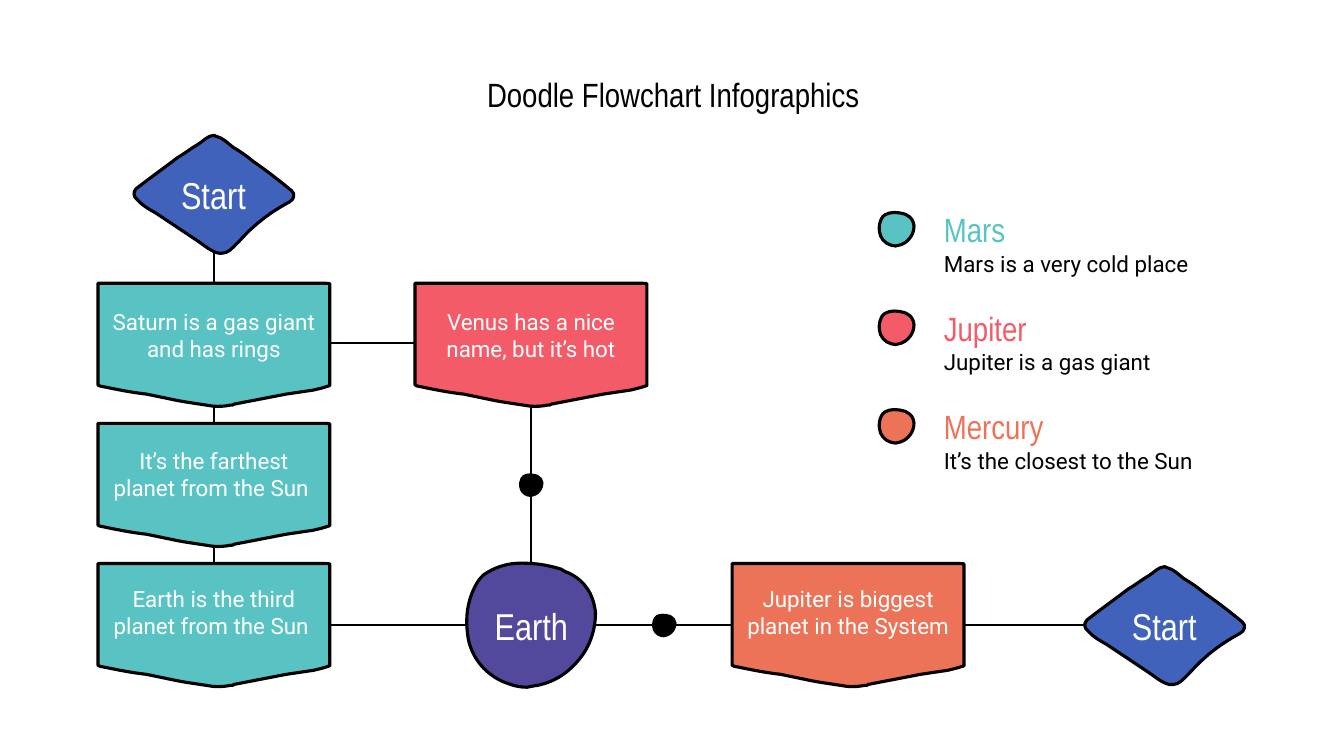
from lxml import etree
from pptx import Presentation
from pptx.dml.color import RGBColor
from pptx.enum.shapes import MSO_CONNECTOR
from pptx.enum.text import MSO_ANCHOR as ANCHOR, PP_ALIGN as ALIGN
from pptx.oxml.ns import qn
from pptx.util import Pt

BLACK = RGBColor(0x00, 0x00, 0x00)
WHITE = RGBColor(0xFF, 0xFF, 0xFF)
BLUE = RGBColor(0x40, 0x62, 0xBB)
PURPLE = RGBColor(0x52, 0x48, 0x9C)
TEAL = RGBColor(0x59, 0xC3, 0xC3)
RED = RGBColor(0xF4, 0x5B, 0x69)
ORANGE = RGBColor(0xEC, 0x73, 0x57)
HEAD, BODY = "Arial Narrow", "Roboto"

TITLE = "Doodle Flowchart Infographics"
STEPS = [
    (0, 0, "Saturn is a gas giant and has rings", TEAL),
    (0, 1, "It’s the farthest planet from the Sun ", TEAL),
    (1, 0, "Venus has a nice name, but it’s hot", RED),
    (0, 2, "Earth is the third planet from the Sun ", TEAL),
    (2, 2, "Jupiter is biggest planet in the System", ORANGE),
]
LEGEND = [
    ("Mars", "Mars is a very cold place", TEAL),
    ("Jupiter", "Jupiter is a gas giant", RED),
    ("Mercury", "It’s the closest to the Sun", ORANGE),
]
LINKS = [
    (152.9, 177, 152.9, 412),
    (379.4, 289, 379.4, 405),
    (232.5, 446.4, 776, 446.4),
    (235.5, 244.8, 296.6, 244.8),
]
DOTS = [(370.6, 338.2), (465.6, 438.4)]

DIAMOND = [
    (57.6, 0),
    (53.3, 0, 49.7, 4.3, 46.1, 6.5),
    (41, 9.4, 36.7, 13, 31.7, 15.8),
    (22.3, 23, 12.2, 30.2, 2.9, 37.4),
    (2.2, 37.4, 2.2, 38.2, 1.4, 38.9),
    (0, 40.3, 0, 43.9, 2.2, 45.4),
    (5.8, 49.7, 10.8, 52.6, 15.8, 55.4),
    (31, 65.5),
    (46.1, 75.6),
    (50.4, 78.5, 56.2, 83.5, 61.2, 84.2),
    (61.9, 84.2, 62.6, 84.2, 63.4, 84.2),
    (67.7, 84.2, 70.6, 80.6, 74.2, 77),
    (77.8, 73.4, 81.4, 69.1, 85.7, 65.5),
    (93.6, 58.3, 102.2, 52.6, 111.6, 47.5),
    (114.5, 46.1, 115.9, 41.8, 113, 39.6),
    (104.4, 32.4, 95, 25.2, 85.7, 18.7),
    (81.4, 15.1, 76.3, 11.5, 71.3, 8.6),
    (67.7, 5.8, 63.4, 1.4, 59, 0.7),
    (58.3, 0, 58, 0, 57.6, 0),
]
BLOB = [
    (39.6, 0),
    (31, 0, 23, 2.2, 15.8, 6.5),
    (11.5, 8.6, 8.6, 13, 6.5, 17.3),
    (1.4, 27.4, 0, 38.9, 1.4, 49.7),
    (2.9, 67, 15.1, 81.4, 31.7, 86.4),
    (35.3, 87.8, 39.6, 88.6, 43.9, 88.6),
    (45.4, 88.6, 46.8, 87.8, 48.2, 87.8),
    (64.1, 85.7, 75.6, 77, 84.2, 64.8),
    (90, 56.2, 92.9, 46.1, 92.9, 35.3),
    (91.4, 22.3, 85.7, 13, 74.2, 7.2),
    (72, 6.5, 70.6, 5.8, 68.4, 4.3),
    (59, 1.4, 50.4, 0, 41, 0),
    (40.5, 0, 40, 0, 39.6, 0),
]
PENNANT = [
    (165.6, 0.3),
    (164.2, 0, 161.3, 0, 158.4, 0),
    (74.9, 0),
    (34.6, 0),
    (25.2, 0, 15.1, 0, 5.8, 0),
    (4.3, 0, 2.9, 0, 0, 0),
    (0, 72.7),
    (1.4, 73.4),
    (12.2, 75.6, 22.3, 77.8, 34.6, 79.2),
    (55.4, 83.5),
    (62.6, 85, 73.4, 86.4, 82.1, 87.8),
    (86.4, 88.2, 91.4, 87.8, 94.3, 87.1),
    (95.8, 87.1, 97.2, 87.1, 97.2, 86.4),
    (134.6, 79.2),
    (154.1, 76.3),
    (159.8, 74.9),
    (162.7, 74.2, 164.2, 73.4, 165.6, 73.1),
]


def write(sp, text, size, font, color, align=ALIGN.CENTER, anchor=ANCHOR.MIDDLE):
    tf = sp.text_frame
    tf.word_wrap = True
    tf.vertical_anchor = anchor
    tf.margin_left = tf.margin_right = tf.margin_top = tf.margin_bottom = Pt(9.6)
    p = tf.paragraphs[0]
    p.text = text
    p.alignment = align
    p.font.size, p.font.name = Pt(size), font
    p.font.color.rgb = color


def add_text(s, x, y, w, h, *style):
    write(s.shapes.add_textbox(Pt(x), Pt(y), Pt(w), Pt(h)), *style)


def bend(sp, outline, scale):
    left = min(seg[-2] for seg in outline)
    top = min(seg[-1] for seg in outline)
    for line, seg in zip(list(sp._element.iter(qn("a:lnTo"))), outline[1:]):
        if len(seg) == 6:
            line.tag = qn("a:cubicBezTo")
            line.clear()
            for x, y in zip(seg[::2], seg[1::2]):
                etree.SubElement(line, qn("a:pt"), x=str(Pt((x - left) * scale)),
                                 y=str(Pt((y - top) * scale)))


def add_doodle(s, outline, x, y, fill, scale=1, outlined=True):
    anchors = [(Pt(seg[-2] * scale), Pt(seg[-1] * scale)) for seg in outline]
    builder = s.shapes.build_freeform(*anchors[0])
    builder.add_line_segments(anchors[1:], close=False)
    sp = builder.convert_to_shape(Pt(x), Pt(y))
    bend(sp, outline, scale)
    outline_end = next(sp._element.iter(qn("a:moveTo"))).getparent()
    etree.SubElement(outline_end, qn("a:close"))
    sp.shadow.inherit = False
    sp.fill.solid()
    sp.fill.fore_color.rgb = fill
    if outlined:
        sp.line.color.rgb = BLACK
        sp.line.width = Pt(2.25)
    else:
        sp.line.fill.background()
    return sp


def add_link(s, x1, y1, x2, y2):
    link = s.shapes.add_connector(MSO_CONNECTOR.STRAIGHT, Pt(x1), Pt(y1), Pt(x2), Pt(y2))
    link.line.color.rgb = BLACK
    link.line.width = Pt(1.5)
    etree.SubElement(link._element.spPr, qn("a:effectLst"))


def main():
    prs = Presentation()
    prs.slide_width, prs.slide_height = Pt(960), Pt(540)
    s = prs.slides.add_slide(prs.slide_layouts[6])

    add_text(s, 48.8, 43.2, 864, 48, TITLE, 24, HEAD, BLACK)
    for link in LINKS:
        add_link(s, *link)
    for outline, x, y, text, fill in [
        (DIAMOND, 95.3, 96.7, "Start", BLUE),
        (DIAMOND, 774.4, 404.8, "Start", BLUE),
        (BLOB, 332.5, 402.3, "Earth", PURPLE),
    ]:
        write(add_doodle(s, outline, x, y, fill), text, 26.7, HEAD, WHITE)
    for x, y in DOTS:
        add_doodle(s, BLOB, x, y, BLACK, 0.19, False)

    for i, (name, note, color) in enumerate(LEGEND):
        y = 144.3 + 70.4 * i
        add_doodle(s, BLOB, 627.8, y + 7.5, color, 0.27)
        add_text(s, 664.6, y, 247.7, 38.9, name, 24, HEAD, color, ALIGN.LEFT)
        add_text(s, 664.6, y + 24.5, 247.7, 35.3, note, 16, BODY, BLACK, ALIGN.LEFT, ANCHOR.TOP)

    for col, row, text, color in STEPS:
        x = 70 + 226.5 * col
        add_doodle(s, PENNANT, x, 202.3 + 100.1 * row, color)
        add_text(s, x, 204.1 + 99 * row, 165.6, 70.6, text, 16, BODY, WHITE)

    prs.save("out.pptx")


if __name__ == "__main__":
    main()
